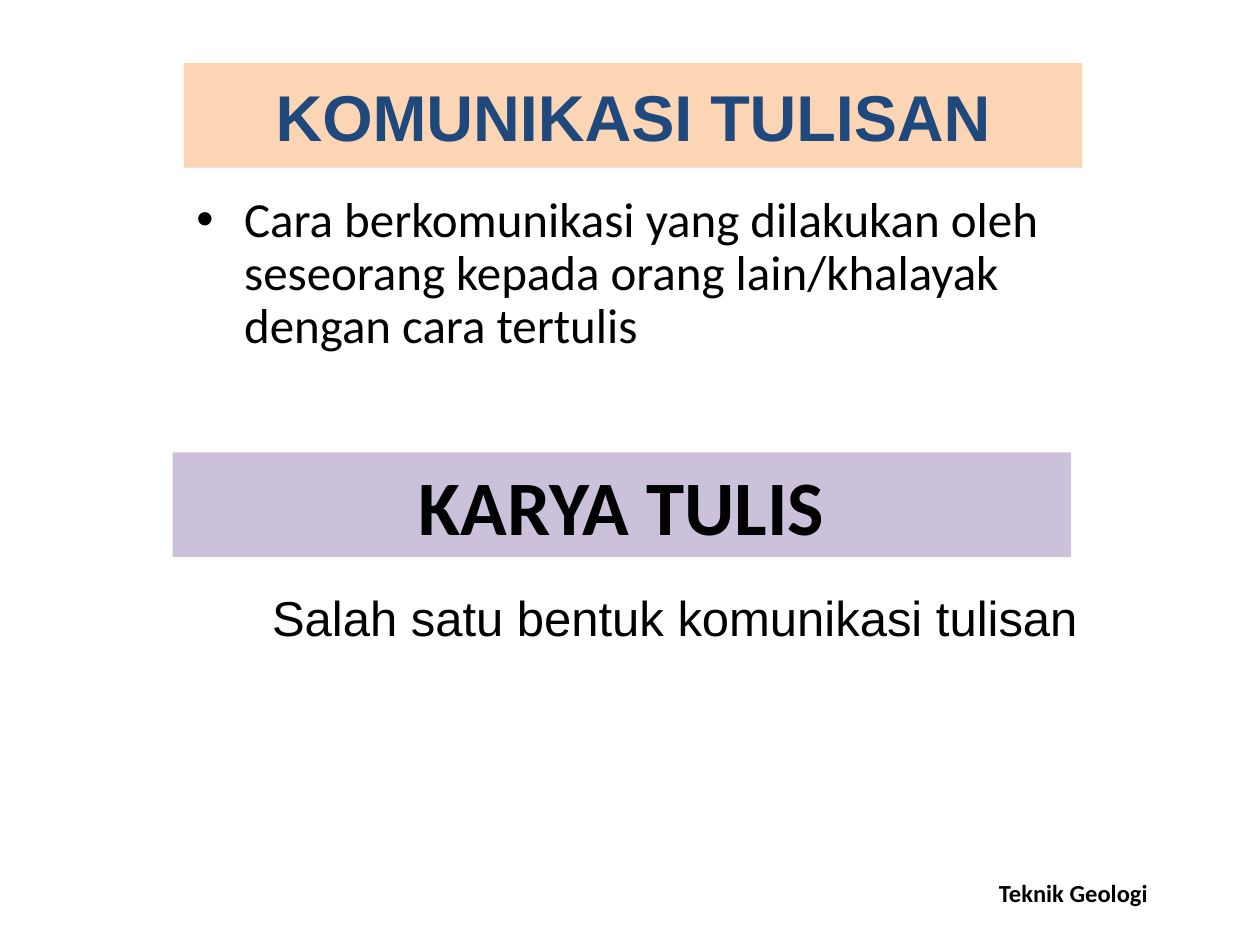
from dataclasses import dataclass
from typing import Optional

from lxml.etree import SubElement
from pptx import Presentation
from pptx.dml.color import RGBColor
from pptx.enum.shapes import MSO_SHAPE as Shape
from pptx.enum.text import MSO_ANCHOR as Anchor, MSO_AUTO_SIZE as AutoSize, PP_ALIGN as Align
from pptx.oxml.ns import qn
from pptx.util import Inches, Pt

COLORS = {"black": "000000", "navy": "1F497D", "peach": "FCD5B5", "lilac": "CCC1DA"}


@dataclass
class Block:
    text: str
    left: float
    top: float
    width: float
    height: float
    size: int
    font: str = "Calibri"
    color: str = "black"
    bold: bool = False
    fill: Optional[str] = None
    align: Align = Align.LEFT
    anchor: Anchor = Anchor.TOP
    line_spacing: float = 1.0
    bullet: bool = False


TITLE = Block("KOMUNIKASI TULISAN", 1.46, 0.5, 7.13, 0.83, 37, "Arial", "navy", True,
              "peach", Align.CENTER, Anchor.MIDDLE)
BLOCKS = [
    Block("Cara berkomunikasi yang dilakukan oleh seseorang kepada orang "
          "lain/khalayak dengan cara tertulis",
          1.46, 1.5, 7.13, 1.35, 28, line_spacing=0.9, bullet=True),
    Block("KARYA TULIS", 1.37, 3.59, 7.13, 0.83, 44, bold=True, fill="lilac",
          align=Align.CENTER),
    Block("Salah satu bentuk komunikasi tulisan", 2.04, 4.67, 6.63, 1.35, 28, "Arial",
          align=Align.CENTER, line_spacing=0.9),
    Block("Teknik Geologi", 7.83, 6.92, 1.5, 0.33, 14, bold=True),
]


def rgb(name: str) -> RGBColor:
    return RGBColor.from_string(COLORS[name])


def add_bullet(p, indent: float) -> None:
    pPr = p._p.get_or_add_pPr()
    pPr.set("marL", str(Inches(indent)))
    pPr.set("indent", str(-Inches(indent)))
    SubElement(pPr, qn("a:buFont")).set("typeface", "Arial")
    SubElement(pPr, qn("a:buChar")).set("char", "•")


def format_block(sp, block: Block) -> None:
    sp.left, sp.top = Inches(block.left), Inches(block.top)
    sp.width, sp.height = Inches(block.width), Inches(block.height)
    if block.fill:
        sp.fill.solid()
        sp.fill.fore_color.rgb = rgb(block.fill)
        sp.line.fill.background()
    tf = sp.text_frame
    tf.word_wrap = True
    tf.auto_size = AutoSize.NONE
    tf.vertical_anchor = block.anchor
    p = tf.paragraphs[0]
    if block.bullet:
        add_bullet(p, 0.38)
    p.alignment = block.align
    p.line_spacing = block.line_spacing
    r = p.add_run()
    r.text = block.text
    r.font.name = block.font
    r.font.size = Pt(block.size)
    r.font.bold = block.bold
    r.font.color.rgb = rgb(block.color)


def add_block(slide, block: Block) -> None:
    box = [Inches(v) for v in (block.left, block.top, block.width, block.height)]
    if block.fill:
        sp = slide.shapes.add_shape(Shape.RECTANGLE, *box)
        sp.shadow.inherit = False
    else:
        sp = slide.shapes.add_textbox(*box)
    format_block(sp, block)


def main() -> None:
    prs = Presentation()
    prs.slide_width, prs.slide_height = Inches(10), Inches(7.5)
    slide = prs.slides.add_slide(prs.slide_layouts[5])
    format_block(slide.shapes.title, TITLE)
    for block in BLOCKS:
        add_block(slide, block)
    prs.save("out.pptx")


if __name__ == "__main__":
    main()
